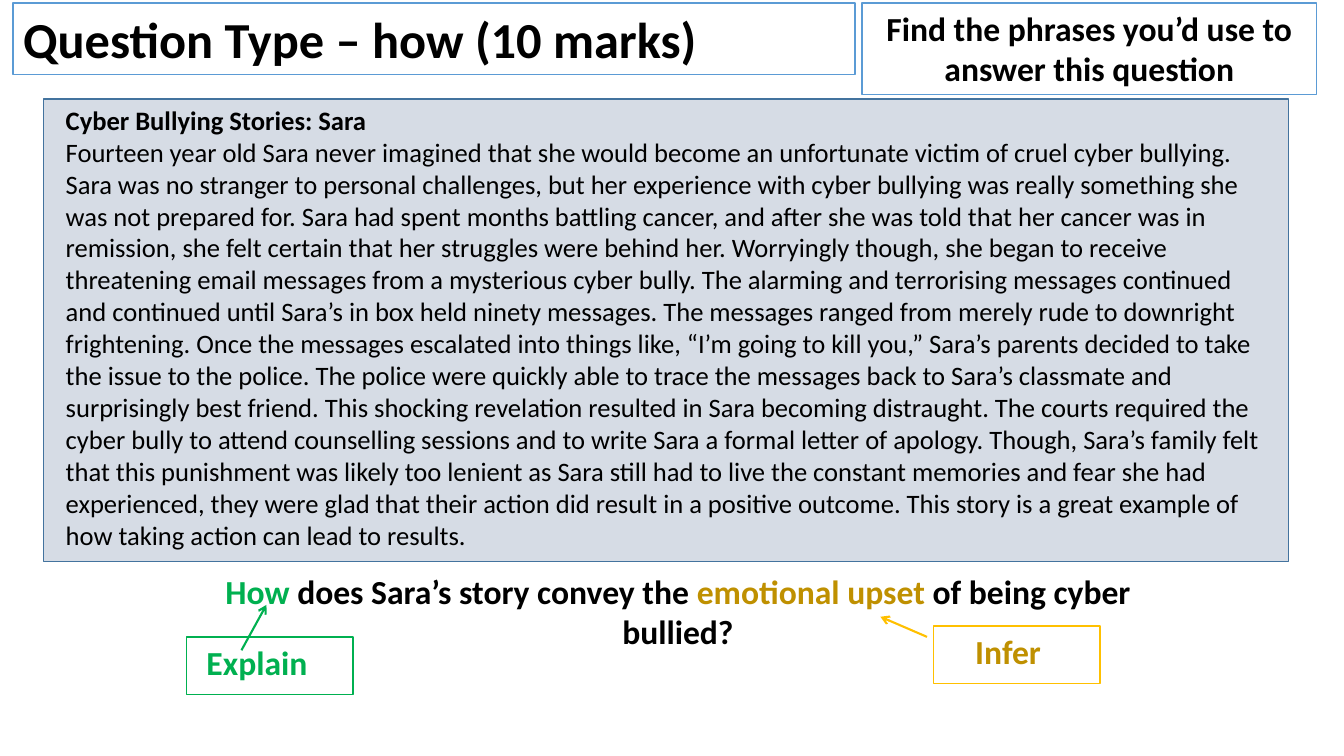
from collections import namedtuple

from lxml.etree import SubElement
from pptx import Presentation
from pptx.dml.color import RGBColor
from pptx.enum.shapes import MSO_CONNECTOR, MSO_SHAPE
from pptx.enum.text import MSO_ANCHOR, PP_ALIGN
from pptx.oxml.ns import qn
from pptx.util import Inches, Pt

Box = namedtuple("Box", "x y w h")

FONT = "Calibri"
BLACK, WHITE, BLUE = "000000", "FFFFFF", "5B9BD5"
GREEN, AMBER, GOLD = "00B050", "FFC000", "BF9000"
PANEL, PANEL_EDGE = "D6DCE5", "43739E"

STORY_TITLE = "Cyber Bullying Stories: Sara"
STORY = [
    "Fourteen year old Sara never imagined that she would become an unfortunate victim of cruel "
    "cyber bullying.",
    "Sara was no stranger to personal challenges, but her experience with cyber bullying was "
    "really something she was not prepared for.",
    "Sara had spent months battling cancer, and after she was told that her cancer was in "
    "remission, she felt certain that her struggles were behind her.",
    "Worryingly though, she began to receive threatening email messages from a mysterious cyber "
    "bully.",
    "The alarming and terrorising messages continued and continued until Sara’s in box held "
    "ninety messages.",
    "The messages ranged from merely rude to downright frightening.",
    "Once the messages escalated into things like, “I’m going to kill you,” Sara’s parents "
    "decided to take the issue to the police.",
    "The police were quickly able to trace the messages back to Sara’s classmate and "
    "surprisingly best friend.",
    "This shocking revelation resulted in Sara becoming distraught.",
    "The courts required the cyber bully to attend counselling sessions and to write Sara a "
    "formal letter of apology.",
    "Though, Sara’s family felt that this punishment was likely too lenient as Sara still had to "
    "live the constant memories and fear she had experienced, they were glad that their action "
    "did result in a positive outcome.",
    "This story is a great example of how taking action can lead to results.",
]

prs = Presentation()
prs.slide_width, prs.slide_height = Inches(13.33), Inches(7.5)


def color(hex_code):
    return RGBColor.from_string(hex_code)


def share(x, y, w, h):
    """Box from percentages of the slide's width and height."""
    sw, sh = prs.slide_width / 100, prs.slide_height / 100
    return Box(int(x * sw), int(y * sh), int(w * sw), int(h * sh))


def within(box, x, y, w=0, h=0):
    """Box from fractions of another box."""
    return Box(int(box.x + x * box.w), int(box.y + y * box.h), int(w * box.w), int(h * box.h))


def write(sp, paragraphs, size, align=PP_ALIGN.LEFT):
    """Fill a shape with paragraphs of (text, colour, bold) runs."""
    tf = sp.text_frame
    tf.word_wrap = True
    tf.vertical_anchor = MSO_ANCHOR.TOP
    for i, runs in enumerate(paragraphs):
        p = tf.add_paragraph() if i else tf.paragraphs[0]
        p.alignment = align
        for text, hex_code, bold in runs:
            r = p.add_run()
            r.text = text
            r.font.name, r.font.size, r.font.bold = FONT, Pt(size), bold
            r.font.color.rgb = color(hex_code)


def frame(s, box, line, fill=None):
    sp = s.shapes.add_shape(MSO_SHAPE.RECTANGLE, *box)
    sp.shadow.inherit = False
    if fill:
        sp.fill.solid()
        sp.fill.fore_color.rgb = color(fill)
    else:
        sp.fill.background()
    sp.line.color.rgb = color(line)
    sp.line.width = Pt(1)
    return sp


def arrow(s, start, end, hex_code):
    c = s.shapes.add_connector(MSO_CONNECTOR.STRAIGHT, start.x, start.y, end.x, end.y)
    c.line.color.rgb = color(hex_code)
    c.line.width = Pt(1.5)
    spPr = c._element.spPr
    SubElement(spPr.find(qn("a:ln")), qn("a:tailEnd"), type="arrow")
    SubElement(spPr, qn("a:effectLst"))


def heading(s, box, text, size, align=PP_ALIGN.LEFT):
    write(frame(s, box, BLUE, WHITE), [[(text, BLACK, True)]], size, align)


def passage(s, box):
    frame(s, box, PANEL_EDGE, PANEL)
    tb = s.shapes.add_textbox(*within(box, 0.01, 0, 0.98, 1))
    write(tb, [[(STORY_TITLE, BLACK, True)], [(" ".join(STORY), BLACK, False)]], 19)


def question(s, box):
    runs = [
        ("How", GREEN, True),
        (" does Sara’s story convey the ", BLACK, True),
        ("emotional upset ", GOLD, True),
        ("of being cyber bullied?", BLACK, True),
    ]
    write(s.shapes.add_textbox(*box), [runs], 24, PP_ALIGN.CENTER)


def callout(s, box, text, line, ink, indent, start, end):
    """Outlined skill label with an arrow to the words it explains."""
    frame(s, box, line)
    tb = s.shapes.add_textbox(*within(box, indent, 0, 1.3, 0.88))
    write(tb, [[(text, ink, True)]], 24)
    arrow(s, within(box, *start), within(box, *end), line)


def main():
    s = prs.slides.add_slide(prs.slide_layouts[6])
    passage(s, share(3.23, 13.07, 92.65, 61.2))
    question(s, share(15, 74.8, 70.89, 12.13))
    callout(s, share(69.47, 82.8, 12.38, 7.6), "Infer", AMBER, GOLD,
            0.19, (-0.04, 0.19), (-0.32, -0.16))
    callout(s, share(13.88, 84.27, 12.38, 7.6), "Explain", GREEN, GREEN,
            0.06, (0.33, 0.23), (0.48, -0.56))
    heading(s, share(64.14, 0.4, 33.83, 12.13),
            "Find the phrases you’d use to answer this question", 24, PP_ALIGN.CENTER)
    heading(s, share(0.98, 0.4, 62.64, 9.47), "Question Type – how (10 marks)", 36)
    prs.save("out.pptx")


if __name__ == "__main__":
    main()
